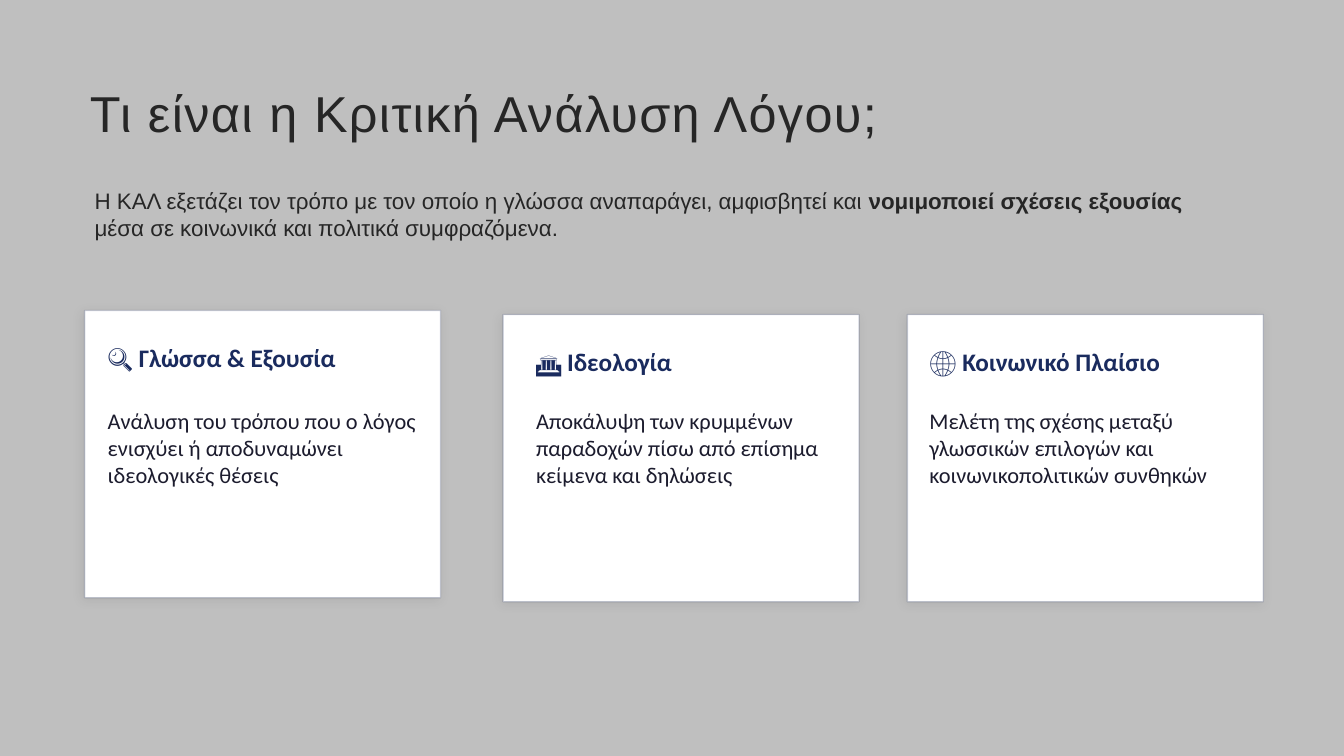
"""Builds a slide that introduces critical discourse analysis with three cards."""
from lxml import etree
from pptx import Presentation
from pptx.dml.color import RGBColor
from pptx.enum.shapes import MSO_SHAPE
from pptx.enum.text import MSO_ANCHOR, PP_ALIGN
from pptx.oxml import parse_xml
from pptx.oxml.ns import qn
from pptx.util import Inches, Pt

RECTANGLE = MSO_SHAPE.RECTANGLE
TOP, MIDDLE = MSO_ANCHOR.TOP, MSO_ANCHOR.MIDDLE
LEFT = PP_ALIGN.LEFT

TITLE = "Τι είναι η Κριτική Ανάλυση Λόγου;"
INTRODUCTION = [
    ("Η ΚΑΛ εξετάζει τον τρόπο με τον οποίο η γλώσσα αναπαράγει, αμφισβητεί και ", False),
    ("νομιμοποιεί σχέσεις εξουσίας", True),
    (" μέσα σε κοινωνικά και πολιτικά συμφραζόμενα.", False),
]
CARDS = [
    {"heading": "🔍 Γλώσσα & Εξουσία",
     "body": "Ανάλυση του τρόπου που ο λόγος ενισχύει ή αποδυναμώνει ιδεολογικές θέσεις",
     "corner": (0.84, 3.08), "inset": 0.13, "heading_row": (0.13, 0.68)},
    {"heading": "🏛️ Ιδεολογία",
     "body": "Αποκάλυψη των κρυμμένων παραδοχών πίσω από επίσημα κείμενα και δηλώσεις",
     "corner": (4.99, 3.12), "inset": 0.23, "heading_row": (0.19, 0.55)},
    {"heading": "🌐 Κοινωνικό Πλαίσιο",
     "body": "Μελέτη της σχέσης μεταξύ γλωσσικών επιλογών και κοινωνικοπολιτικών συνθηκών",
     "corner": (9, 3.12), "inset": 0.12, "heading_row": (0.13, 0.68)},
]
COLORS = {"background": "BFBFBF", "title": "262626", "card": "FFFFFF",
          "navy": "1A2B5E", "body": "1C1C2E", "shadow": "000000"}

SLIDE_WIDTH, SLIDE_HEIGHT = 13.33, 7.5
TITLE_BOX = (0.89, 0.68, 7.99, 2)
INTRODUCTION_BOX = (0.84, 1.57, 11.1, 1.1)
CARD_WIDTH, CARD_HEIGHT = 3.53, 2.85
CARD_RIGHT_MARGIN = 0.13
BODY_TOP, BODY_HEIGHT = 3.99, 1.86

SHADOW_XML = (
    '<a:effectLst xmlns:a="http://schemas.openxmlformats.org/drawingml/2006/main">'
    f'<a:outerShdw blurRad="{Pt(8)}" dist="{Pt(2)}" dir="{135 * 60000}" algn="bl" rotWithShape="0">'
    f'<a:srgbClr val="{COLORS["shadow"]}"><a:alpha val="8000"/></a:srgbClr>'
    '</a:outerShdw></a:effectLst>'
)


def write_text(shape, runs, *, size, font, color, bold=False, anchor=TOP,
               margins=None, line_spacing=None, tracking=None):
    """Fills a shape with one paragraph, given as a string or (text, bold) pairs."""
    frame = shape.text_frame
    frame.word_wrap = True
    frame.vertical_anchor = anchor
    if margins is not None:
        frame.margin_left = frame.margin_right = Inches(margins)
        frame.margin_top = frame.margin_bottom = Inches(margins)
    paragraph = frame.paragraphs[0]
    paragraph.alignment = LEFT
    if line_spacing:
        paragraph.line_spacing = Pt(line_spacing)
    for text, run_bold in [(runs, bold)] if isinstance(runs, str) else runs:
        run = paragraph.add_run()
        run.text = text
        run.font.size = Pt(size)
        run.font.name = font
        run.font.bold = run_bold
        run.font.color.rgb = RGBColor.from_string(COLORS[color])
        if tracking:
            run.font._element.set("spc", str(tracking * 100))


def add_text(slide, box, runs, **text_format):
    """Adds a text box at a left, top, width and height in inches."""
    shape = slide.shapes.add_textbox(*map(Inches, box))
    write_text(shape, runs, **text_format)


def add_panel(slide, left, top):
    """Adds a white card with a faint outline and a soft shadow."""
    panel = slide.shapes.add_shape(
        RECTANGLE, *map(Inches, (left, top, CARD_WIDTH, CARD_HEIGHT)))
    panel.fill.solid()
    panel.fill.fore_color.rgb = RGBColor.from_string(COLORS["card"])
    panel.line.width = Pt(1)
    panel.line.color.rgb = RGBColor.from_string(COLORS["navy"])
    properties = panel._element.spPr
    line_color = properties.find(qn("a:ln")).find(".//" + qn("a:srgbClr"))
    etree.SubElement(line_color, qn("a:alpha")).set("val", "20000")
    properties.append(parse_xml(SHADOW_XML))


def add_card(slide, heading, body, corner, inset, heading_row):
    """Adds a panel with its heading and body text."""
    left, top = corner
    add_panel(slide, left, top)
    text_left = left + inset
    text_width = CARD_WIDTH - inset - CARD_RIGHT_MARGIN
    heading_offset, heading_height = heading_row
    add_text(slide, (text_left, top + heading_offset, text_width, heading_height),
             heading, size=18, font="Calibri", color="navy", bold=True, anchor=MIDDLE)
    add_text(slide, (text_left, BODY_TOP, text_width, BODY_HEIGHT),
             body, size=16, font="Calibri", color="body")


def main():
    """Builds and saves the presentation."""
    presentation = Presentation()
    presentation.slide_width = Inches(SLIDE_WIDTH)
    presentation.slide_height = Inches(SLIDE_HEIGHT)
    slide = presentation.slides.add_slide(presentation.slide_layouts[5])
    slide.background.fill.solid()
    slide.background.fill.fore_color.rgb = RGBColor.from_string(COLORS["background"])

    title = slide.shapes.title
    title.left, title.top, title.width, title.height = map(Inches, TITLE_BOX)
    write_text(title, TITLE, size=36, font="Arial", color="title",
               margins=0, line_spacing=53, tracking=1)
    add_text(slide, INTRODUCTION_BOX, INTRODUCTION,
             size=16, font="Arial", color="title", anchor=MIDDLE)
    for card in CARDS:
        add_card(slide, **card)
    presentation.save("out.pptx")


if __name__ == "__main__":
    main()
